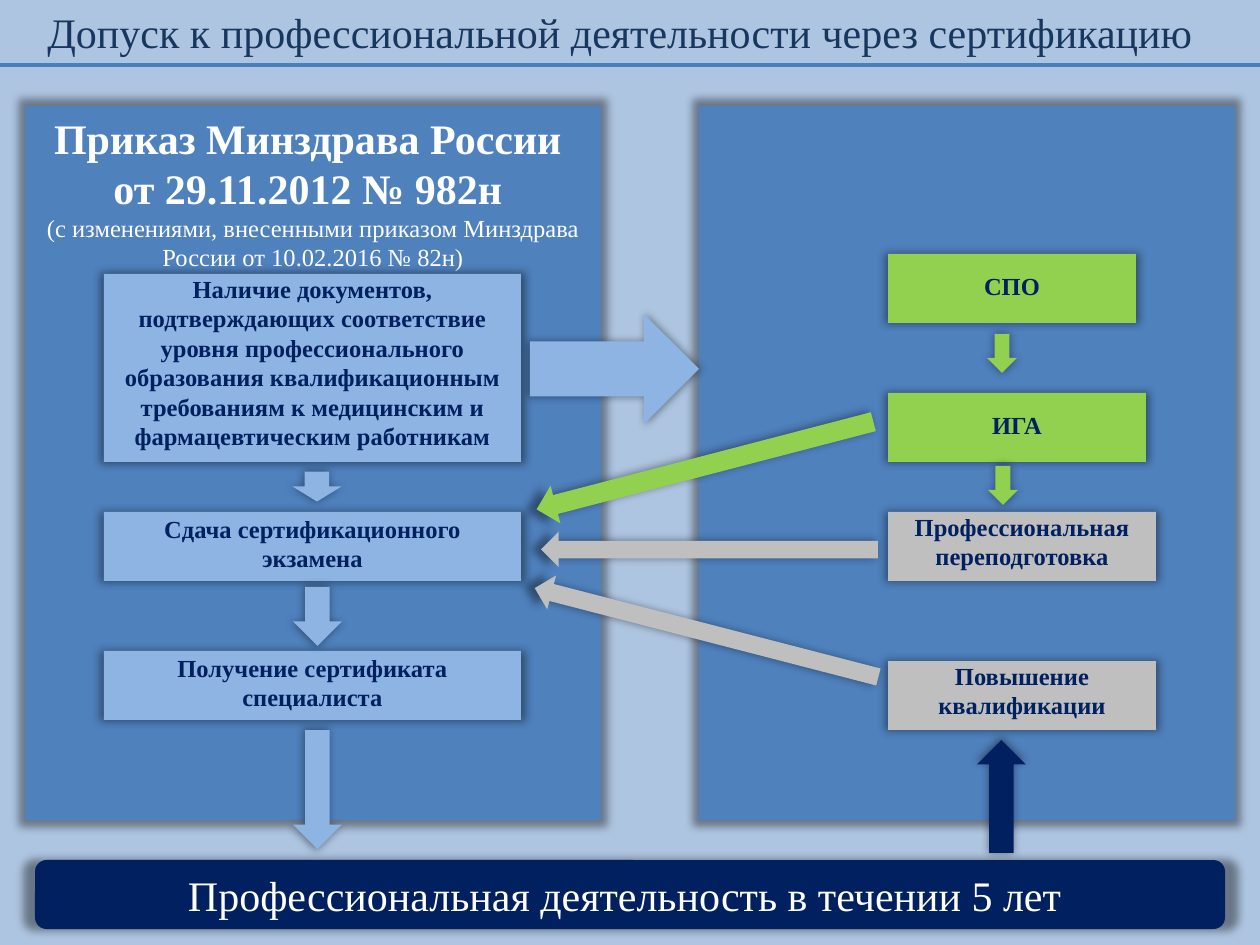
from lxml.etree import SubElement
from pptx import Presentation
from pptx.dml.color import RGBColor
from pptx.enum.shapes import MSO_CONNECTOR, MSO_SHAPE
from pptx.enum.text import MSO_ANCHOR, PP_ALIGN
from pptx.oxml.ns import qn
from pptx.util import Pt

PX = 914400 / 126
FONT = "Times New Roman"
NAVY, BLUE, SKY = "002060", "4F81BD", "8EB4E3"
GREEN, GREY, WHITE = "92D050", "BFBFBF", "FFFFFF"
ROW = 69


def emu(*px):
    return [round(n * PX) for n in px]


def rgb(code):
    return RGBColor.from_string(code)


def write(frame, text, size=14, color=NAVY, bold=False, new=False):
    """Add one centred paragraph; new starts it after the present ones."""
    par = frame.add_paragraph() if new else frame.paragraphs[0]
    par.alignment = PP_ALIGN.CENTER
    run = par.add_run()
    run.text = text
    font = run.font
    font.name, font.size, font.bold = FONT, Pt(size), bold
    font.color.rgb = rgb(color)


def add_glow(shape):
    """Add a soft dark shadow, slightly larger than the shape."""
    shape.shadow.inherit = False
    effects = shape._element.spPr.find(qn("a:effectLst"))
    shade = SubElement(effects, qn("a:outerShdw"), blurRad=str(Pt(5)),
                       sx="102000", sy="102000", algn="ctr", rotWithShape="0")
    tint = SubElement(shade, qn("a:srgbClr"), val="000000")
    SubElement(tint, qn("a:alpha"), val="40000")


def add_shape(slide, kind, at, fill):
    shape = slide.shapes.add_shape(kind, *emu(*at))
    shape.fill.solid()
    shape.fill.fore_color.rgb = rgb(fill)
    shape.line.fill.background()
    add_glow(shape)
    return shape


def add_box(slide, text, at, fill, anchor=MSO_ANCHOR.MIDDLE):
    frame = add_shape(slide, MSO_SHAPE.RECTANGLE, at, fill).text_frame
    frame.word_wrap = True
    frame.vertical_anchor = anchor
    frame.margin_top = 0
    write(frame, text, bold=True)


def add_arrow(slide, at, fill, turn=0, kind=MSO_SHAPE.RIGHT_ARROW):
    add_shape(slide, kind, at, fill).rotation = turn


def add_title(slide):
    box = slide.shapes.add_textbox(*emu(29, 0, 1182, 63))
    box.text_frame.word_wrap = False
    write(box.text_frame,
          "Допуск к профессиональной деятельности через сертификацию",
          size=24, color="17375E")
    rule = slide.shapes.add_connector(MSO_CONNECTOR.STRAIGHT,
                                      *emu(0, 65, 1260, 65))
    rule.line.color.rgb = rgb("4B7EBC")
    rule.line.width = Pt(1.75)
    SubElement(rule._element.spPr, qn("a:effectLst"))


def add_order(slide):
    """Left panel: the order and the steps to a certificate."""
    panel = add_shape(slide, MSO_SHAPE.RECTANGLE, (25, 106, 576, 714), BLUE)
    frame = panel.text_frame
    frame.word_wrap = True
    frame.vertical_anchor = MSO_ANCHOR.TOP
    write(frame, "Приказ Минздрава России ", size=24, color=WHITE, bold=True)
    write(frame, "от 29.11.2012 № 982н ", size=24, color=WHITE, bold=True,
          new=True)
    write(frame, "(с изменениями, внесенными приказом Минздрава России "
          "от 10.02.2016 № 82н)", color=WHITE, new=True)
    left, width = 104, 417
    add_box(slide, "Наличие документов, подтверждающих соответствие уровня "
            "профессионального образования квалификационным требованиям к "
            "медицинским и фармацевтическим работникам",
            (left, 274, width, 188), SKY, MSO_ANCHOR.TOP)
    add_box(slide, "Сдача сертификационного экзамена",
            (left, 512, width, ROW), SKY)
    add_box(slide, "Получение сертификата специалиста",
            (left, 651, width, ROW), SKY)


def add_levels(slide):
    """Right panel: the levels of training."""
    add_shape(slide, MSO_SHAPE.RECTANGLE, (699, 106, 536, 714), BLUE)
    mid, top = MSO_ANCHOR.MIDDLE, MSO_ANCHOR.TOP
    for text, y, width, fill, anchor in (
            ("СПО", 254, 248, GREEN, mid),
            ("ИГА", 393, 258, GREEN, mid),
            ("Профессиональная переподготовка", 512, 268, GREY, top),
            ("Повышение квалификации", 661, 268, GREY, top)):
        add_box(slide, text, (888, y, width, ROW), fill, anchor)
    for x, y in ((987, 334), (988, 466)):
        add_arrow(slide, (x, y, 30, 39), GREEN, kind=MSO_SHAPE.DOWN_ARROW)


def add_flow(slide):
    """Arrows between the panels and the steps."""
    for at, fill, turn in (
            ((530, 314, 169, 110), SKY, 0),
            ((531, 446, 348, 39), GREEN, 165.4),
            ((541, 532, 337, 35), GREY, 180),
            ((529, 615, 355, 35), GREY, 194.5),
            ((302, 462, 30, 49), SKY, 90),
            ((288, 592, 59, 49), SKY, 90),
            ((258, 765, 119, 49), SKY, 90),
            ((945, 772, 113, 49), NAVY, 270)):
        add_arrow(slide, at, fill, turn)


def add_base(slide):
    bar = add_shape(slide, MSO_SHAPE.ROUNDED_RECTANGLE,
                    (35, 860, 1190, ROW), NAVY)
    bar.text_frame.word_wrap = True
    bar.text_frame.vertical_anchor = MSO_ANCHOR.MIDDLE
    write(bar.text_frame, "Профессиональная деятельность в течении 5 лет ",
          size=24, color=WHITE)


def main():
    deck = Presentation()
    deck.slide_width, deck.slide_height = emu(1260, 945)
    slide = deck.slides.add_slide(deck.slide_layouts[6])
    back = slide.background.fill
    back.solid()
    back.fore_color.rgb = rgb("AEC5E1")
    add_title(slide)
    add_order(slide)
    add_levels(slide)
    add_base(slide)
    add_flow(slide)
    deck.save("out.pptx")


if __name__ == "__main__":
    main()
